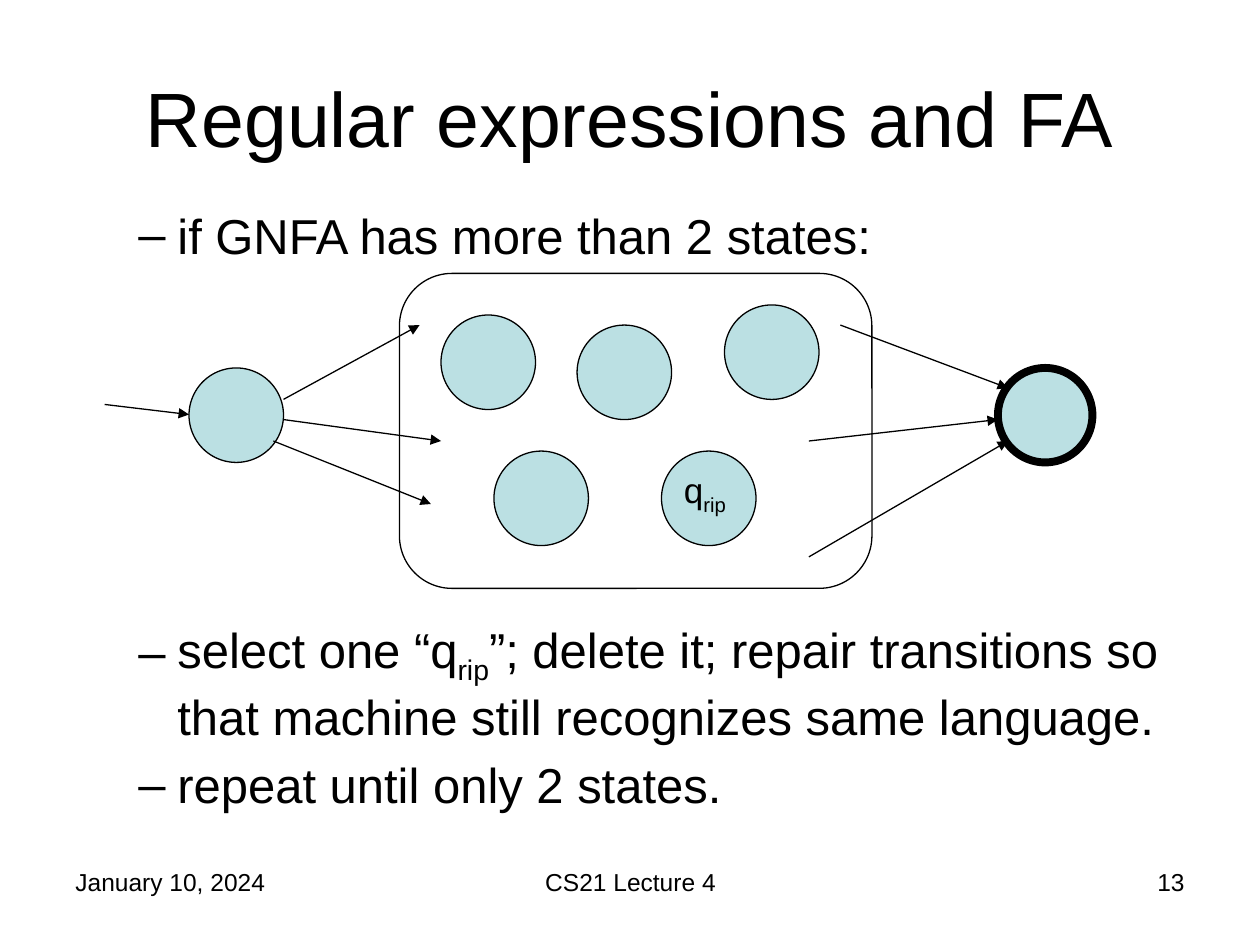
import pptx
import pptx.util
import pptx.dml.color
import pptx.enum.shapes
import pptx.enum.text
import pptx.oxml.ns
import lxml.etree

Inches, Pt = pptx.util.Inches, pptx.util.Pt
Shape = pptx.enum.shapes.MSO_SHAPE
Align = pptx.enum.text.PP_ALIGN
Anchor = pptx.enum.text.MSO_ANCHOR
qn = pptx.oxml.ns.qn

# Content: each paragraph is a list of (text, is subscript)
TITLE = "Regular expressions and FA"
POINTS = [  # space before in points, runs
    (5.6, [("if GNFA has more than 2 states:", False)]),
    (203, [("select one “q", False), ("rip", True),
           ("”; delete it; repair transitions so that machine still "
            "recognizes same language.", False)]),
    (5.6, [("repeat until only 2 states.", False)]),
]
LABEL = [("q", False), ("rip", True)]
FOOTER = [  # text, left, width, alignment
    ("January 10, 2024", 0.5, 2.33, Align.LEFT),
    ("CS21 Lecture 4", 3.42, 3.17, Align.CENTER),
    ("13", 7.17, 2.33, Align.RIGHT),
]

# Diagram: left and top of each state, then arrow ends
START, ACCEPT, RIP = (1.5, 2.92), (7.92, 2.92), (5.25, 3.58)
INNER = [(3.5, 2.5), (5.75, 2.42), (4.58, 2.58), (3.92, 3.58), RIP]
ARROWS = [
    (0.83, 3.21, 1.5, 3.29),
    (2.25, 3.17, 3.33, 2.58), (2.25, 3.33, 3.5, 3.5), (2.17, 3.5, 3.42, 4),
    (6.67, 2.58, 8, 3.08), (6.42, 3.5, 7.92, 3.33), (6.42, 4.42, 8, 3.5),
]
SIZE = 0.75
THEME = {
    "font": "Arial", "ink": "000000", "state": "BBE0E3",
    "title": 44, "body": 28, "label": 20, "foot": 14,
    "thin": 0.75, "thick": 4.5,
}


def color(name):
    return pptx.dml.color.RGBColor.from_string(THEME[name])


def write(para, runs, size, align=Align.LEFT):
    para.alignment = align
    for text, sub in runs:
        run = para.add_run()
        run.text = text
        run.font.name = THEME["font"]
        run.font.size = Pt(THEME[size])
        run.font.color.rgb = color("ink")
        if sub:
            run.font._element.set("baseline", "-25000")


def add_box(slide, left, top, width, height):
    box = slide.shapes.add_textbox(*map(Inches, (left, top, width, height)))
    box.text_frame.word_wrap = True
    return box.text_frame


def add_dash(para):
    props = para._p.get_or_add_pPr()
    props.set("marL", str(Inches(0.81)))
    props.set("indent", str(Inches(-0.31)))
    lxml.etree.SubElement(props, qn("a:buFont"), typeface=THEME["font"])
    lxml.etree.SubElement(props, qn("a:buChar"), char="–")


def add_form(slide, kind, left, top, width, height, line="thin", fill=None):
    form = slide.shapes.add_shape(
        kind, *map(Inches, (left, top, width, height)))
    form.shadow.inherit = False
    if fill:
        form.fill.solid()
        form.fill.fore_color.rgb = color(fill)
    else:
        form.fill.background()
    form.line.color.rgb = color("ink")
    form.line.width = Pt(THEME[line])
    return form


def add_state(slide, spot, line="thin"):
    add_form(slide, Shape.OVAL, *spot, SIZE, SIZE, line, "state")


def add_arrow(slide, ends):
    arrow = slide.shapes.add_connector(
        pptx.enum.shapes.MSO_CONNECTOR.STRAIGHT, *map(Inches, ends))
    arrow.line.color.rgb = color("ink")
    arrow.line.width = Pt(THEME["thin"])
    lxml.etree.SubElement(
        arrow.line._get_or_add_ln(), qn("a:tailEnd"), type="triangle")
    lxml.etree.SubElement(arrow._element.spPr, qn("a:effectLst"))


def main():
    deck = pptx.Presentation()
    deck.slide_width, deck.slide_height = Inches(10), Inches(7.5)
    slide = deck.slides.add_slide(deck.slide_layouts[5])

    # Title
    title = slide.shapes.title
    title.left, title.top = Inches(0.5), Inches(0.3)
    title.width, title.height = Inches(9), Inches(1.25)
    title.text_frame.vertical_anchor = Anchor.MIDDLE
    write(title.text_frame.paragraphs[0], [(TITLE, False)], "title",
          Align.CENTER)

    # Points above and below the diagram
    frame = add_box(slide, 0.5, 1.58, 9, 5.25)
    for i, (gap, runs) in enumerate(POINTS):
        para = frame.add_paragraph() if i else frame.paragraphs[0]
        para.space_before = Pt(gap)
        add_dash(para)
        write(para, runs, "body")

    # Machine: frame, states and transitions
    panel = add_form(slide, Shape.ROUNDED_RECTANGLE, 3.17, 2.17, 3.75, 2.5)
    panel.adjustments[0] = 0.167
    for spot in [START] + INNER:
        add_state(slide, spot)
    add_state(slide, ACCEPT, "thick")
    for ends in ARROWS:
        add_arrow(slide, ends)
    label = add_box(slide, RIP[0] + 0.08, RIP[1] + 0.09, 0.67, 0.43)
    write(label.paragraphs[0], LABEL, "label")

    # Footer
    for text, left, width, align in FOOTER:
        foot = add_box(slide, left, 6.83, width, 0.52)
        write(foot.paragraphs[0], [(text, False)], "foot", align)

    deck.save("out.pptx")


if __name__ == "__main__":
    main()
